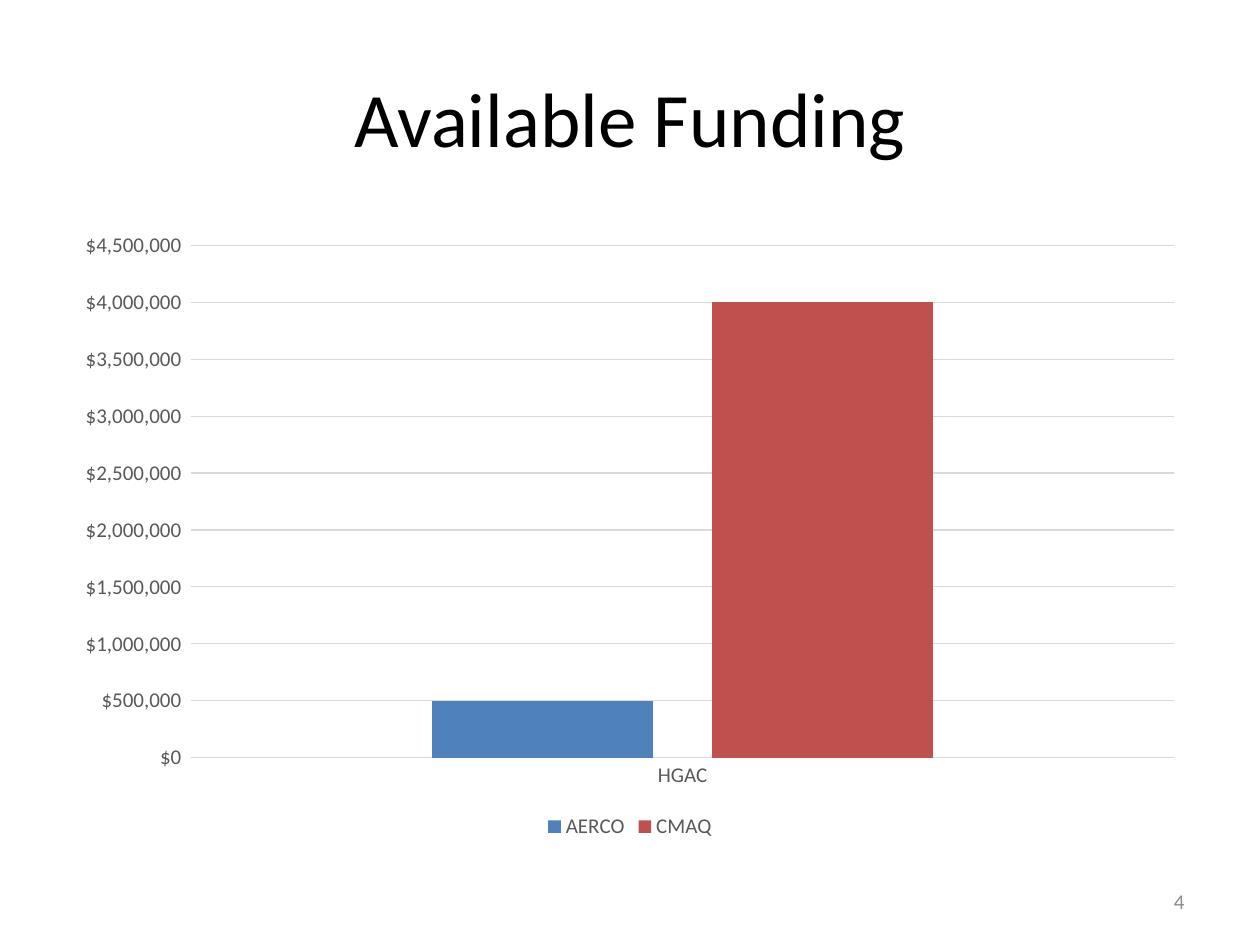
from lxml import etree
from pptx import Presentation
from pptx.chart.data import CategoryChartData
from pptx.dml.color import RGBColor
from pptx.enum.chart import XL_CHART_TYPE, XL_LEGEND_POSITION, XL_TICK_MARK
from pptx.enum.text import MSO_ANCHOR, PP_ALIGN
from pptx.util import Pt

PX = 9144
FACE = "Calibri"
BLACK = RGBColor(0x00, 0x00, 0x00)
DARK = RGBColor(0x59, 0x59, 0x59)
GRAY = RGBColor(0x8C, 0x8C, 0x8C)
PALE = RGBColor(0xD9, 0xD9, 0xD9)
BLUE = RGBColor(0x4F, 0x81, 0xBD)
RED = RGBColor(0xC0, 0x50, 0x4D)
COLUMN = XL_CHART_TYPE.COLUMN_CLUSTERED
BOTTOM = XL_LEGEND_POSITION.BOTTOM
NO_TICK = XL_TICK_MARK.NONE
MIDDLE = MSO_ANCHOR.MIDDLE
CENTER = PP_ALIGN.CENTER
RIGHT = PP_ALIGN.RIGHT
MONEY = '"$"#,##0_);[Red]\\("$"#,##0\\)'
FUNDS = [("AERCO", 500000, BLUE), ("CMAQ", 4000000, RED)]


def scale(*sizes):
    """Turn px lengths into EMU."""
    return [size * PX for size in sizes]


def style(font, size, color):
    """Set the face, size and colour of a font."""
    font.name = FACE
    font.size = Pt(size)
    font.color.rgb = color


def write(shape, text, size, color, align):
    """Put one line of text into a shape."""
    frame = shape.text_frame
    frame.word_wrap = True
    frame.vertical_anchor = MIDDLE
    line = frame.paragraphs[0]
    line.alignment = align
    run = line.add_run()
    run.text = text
    style(run.font, size, color)


def add_title(slide, text, box):
    """Move and fill the title placeholder."""
    title = slide.shapes.title
    title.left, title.top, title.width, title.height = scale(*box)
    write(title, text, 44, BLACK, CENTER)


def add_label(slide, text, box):
    """Add a small right-aligned text box."""
    label = slide.shapes.add_textbox(*scale(*box))
    write(label, text, 12, GRAY, RIGHT)


def set_line(line):
    """Give a chart line its thin pale look."""
    line.color.rgb = PALE
    line.width = Pt(0.75)


def set_axes(chart):
    """Format both axes and the grid."""
    for axis in (chart.category_axis, chart.value_axis):
        axis.major_tick_mark = axis.minor_tick_mark = NO_TICK
        style(axis.tick_labels.font, 12, DARK)
    set_line(chart.category_axis.format.line)
    value = chart.value_axis
    value.format.line.fill.background()
    value.has_major_gridlines = True
    set_line(value.major_gridlines.format.line)
    value.minimum_scale = 0
    value.maximum_scale = 4500000
    value.major_unit = 500000
    value.tick_labels.number_format = MONEY
    value.tick_labels.number_format_is_linked = False


def add_columns(slide, box):
    """Add the column chart of funds."""
    data = CategoryChartData(number_format=MONEY)
    data.categories = ["HGAC"]
    for name, amount, _ in FUNDS:
        data.add_series(name, [amount])
    chart = slide.shapes.add_chart(COLUMN, *scale(*box), data).chart
    style(chart.font, 10, BLACK)
    chart.has_title = False
    set_axes(chart)
    plot = chart.plots[0]
    plot.gap_width = 219
    plot.overlap = -27
    plot.vary_by_categories = False
    for series, (_, _, color) in zip(plot.series, FUNDS):
        series.format.fill.solid()
        series.format.fill.fore_color.rgb = color
    chart.has_legend = True
    chart.legend.position = BOTTOM
    chart.legend.include_in_layout = False
    style(chart.legend.font, 12, DARK)


def main():
    """Build and save the slide."""
    deck = Presentation()
    deck.slide_width, deck.slide_height = scale(1000, 750)
    slide = deck.slides.add_slide(deck.slide_layouts[5])
    add_title(slide, "Available Funding", (50, 30, 900, 125))
    add_columns(slide, (50, 175, 900, 495))
    add_label(slide, "4", (717, 695, 233, 40))
    deck.save("out.pptx")


if __name__ == "__main__":
    main()
